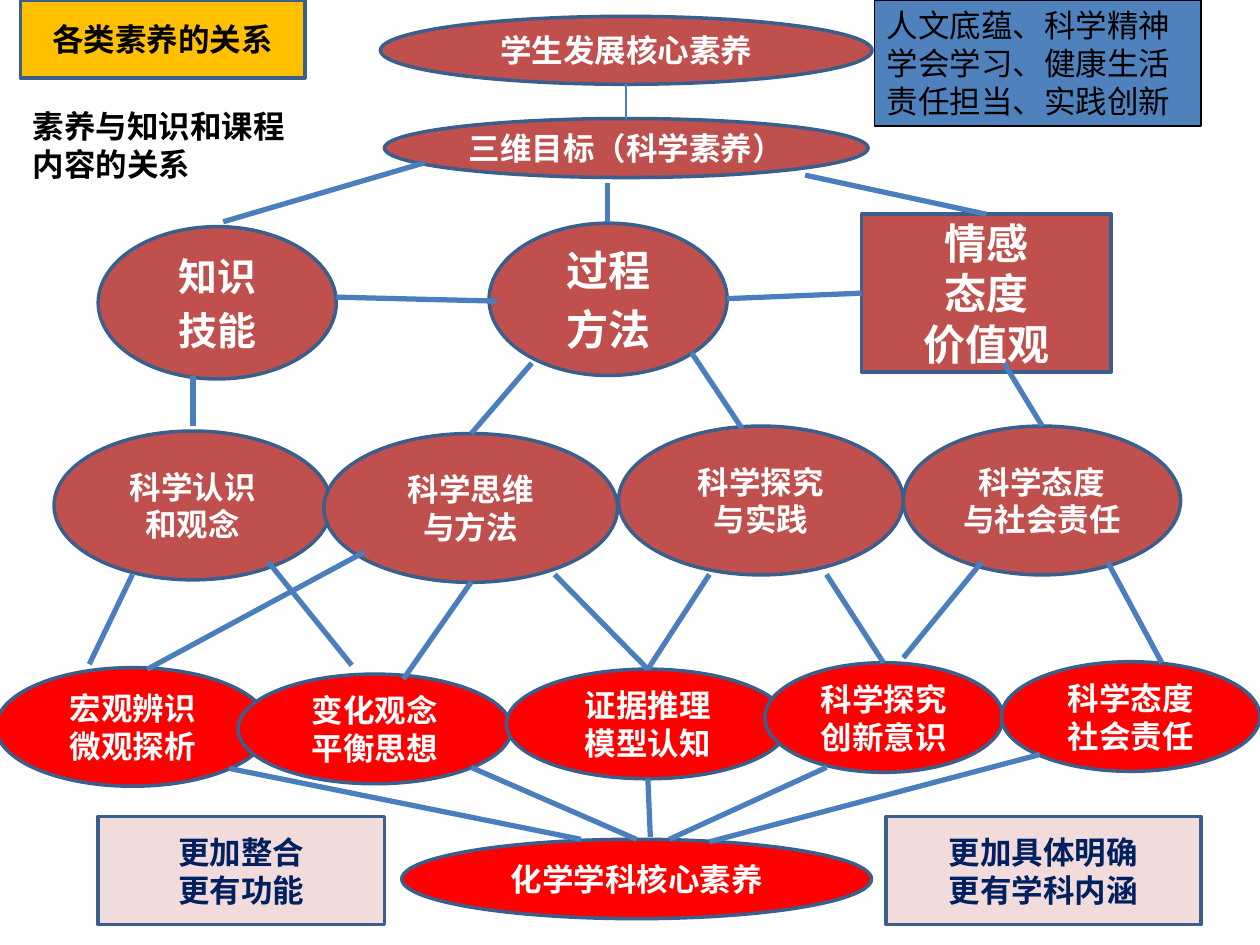
"""Draw the map that links kinds of core literacy."""
from dataclasses import dataclass
from typing import NamedTuple

from lxml.etree import SubElement
from pptx import Presentation
from pptx.dml.color import RGBColor
from pptx.enum.shapes import MSO_CONNECTOR, MSO_SHAPE
from pptx.enum.text import MSO_ANCHOR, PP_ALIGN
from pptx.oxml.ns import qn
from pptx.shapes.autoshape import Shape
from pptx.shapes.connector import Connector
from pptx.slide import Slide
from pptx.text.text import TextFrame
from pptx.util import Cm, Pt


@dataclass(frozen=True)
class Theme:
    font: str = "Calibri"
    brick: str = "C0504D"
    red: str = "FF0000"
    gold: str = "FFC000"
    pink: str = "F2DCDB"
    blue: str = "4F81BD"
    edge: str = "3A5F8C"
    link: str = "4B7EBC"
    navy: str = "002060"
    white: str = "FFFFFF"
    black: str = "000000"
    small: float = 18
    mid: float = 22.2
    large: float = 24
    thin: float = 0.75
    rim: float = 2
    thick: float = 3


LOOK = Theme()


@dataclass(frozen=True)
class Node:
    text: str
    left: float
    top: float
    width: float
    height: float
    fill: str = LOOK.brick
    kind: MSO_SHAPE = MSO_SHAPE.OVAL
    ink: str = LOOK.white
    size: float = LOOK.small
    gap: float = 0
    bold: bool = True
    edge: str = LOOK.edge
    rim: float = LOOK.rim
    align: PP_ALIGN = PP_ALIGN.CENTER
    anchor: MSO_ANCHOR = MSO_ANCHOR.MIDDLE


class Link(NamedTuple):
    left: float
    top: float
    right: float
    base: float
    width: float = LOOK.thick


RECT = MSO_SHAPE.RECTANGLE

VALUES = Node("情感\n态度\n价值观", 17.37, 4.32, 5.03, 3.18, kind=RECT, size=LOOK.large)

NODES = (
    Node("知识\n技能", 1.98, 4.57, 4.8, 3.07, size=LOOK.mid, gap=0.2),
    Node("过程\n方法", 9.86, 4.5, 4.8, 3.07, size=LOOK.large, gap=0.2),
    Node("科学认识\n和观念", 1.09, 8.69, 5.59, 3),
    Node("科学思维\n与方法", 6.53, 8.74, 5.92, 3),
    Node("科学探究\n与实践", 12.47, 8.59, 5.74, 3),
    Node("科学态度\n与社会责任", 18.21, 8.59, 5.59, 3),
    Node("宏观辨识\n微观探析", -0.08, 13.46, 5.51, 2.39, LOOK.red),
    Node("变化观念\n平衡思想", 4.8, 13.59, 5.51, 2.21, LOOK.red),
    Node("证据推理\n模型认知", 10.21, 13.49, 5.69, 2.21, LOOK.red),
    Node("科学探究创新意识", 15.42, 13.36, 4.8, 2.21, LOOK.red),
    Node("科学态度\n社会责任", 20.19, 13.34, 5.21, 2.21, LOOK.red),
    Node("三维目标（科学素养）", 7.75, 2.39, 9.75, 1.19),
    Node("化学学科核心素养", 8.1, 16.92, 9.47, 1.6, LOOK.red),
    Node("学生发展核心素养", 7.67, 0.33, 9.91, 1.37),
    Node("各类素养的关系", 0.41, 0, 5.74, 1.57, LOOK.gold, RECT, LOOK.black),
    Node("更加整合\n更有功能", 1.98, 16.46, 5.77, 2.18, LOOK.pink, RECT, LOOK.navy),
    Node("更加具体明确\n更有学科内涵", 17.86, 16.46, 6.35, 2.18, LOOK.pink, RECT, LOOK.navy),
    Node("人文底蕴、科学精神\n学会学习、健康生活\n责任担当、实践创新", 17.63, 0, 6.58, 2.54,
         LOOK.blue, RECT, LOOK.black, bold=False, edge=LOOK.black, rim=LOOK.thin,
         align=PP_ALIGN.LEFT, anchor=MSO_ANCHOR.TOP),
)

NOTE = Node("素养与知识和课程内容的关系", 0.41, 2.03, 5.74, 1.8, ink=LOOK.black,
            align=PP_ALIGN.LEFT, anchor=MSO_ANCHOR.TOP)

LINKS = (
    Link(12.62, 1.7, 12.62, 2.39, LOOK.thin),
    Link(8.56, 3.28, 4.5, 4.47),
    Link(12.24, 3.68, 12.24, 4.47),
    Link(6.78, 5.99, 10.01, 6.07),
    Link(3.89, 7.57, 3.89, 8.59),
    Link(10.72, 7.32, 9.5, 8.74),
    Link(13.94, 7.11, 14.96, 8.64),
    Link(20.24, 7.32, 21.01, 8.59),
    Link(2.67, 11.58, 1.8, 13.39),
    Link(5.41, 11.33, 7.09, 13.41),
    Link(7.34, 11.13, 2.97, 13.49),
    Link(9.5, 11.73, 8.13, 13.69),
    Link(11.18, 11.58, 13.06, 13.49),
    Link(14.3, 11.58, 13.06, 13.49),
    Link(16.66, 11.58, 17.81, 13.36),
    Link(19.79, 11.33, 18.21, 13.26),
    Link(22.33, 11.33, 23.42, 13.36),
    Link(11.71, 16.92, 4.62, 15.49),
    Link(12.83, 16.92, 9.5, 15.47),
    Link(13.11, 16.87, 13.06, 15.7),
    Link(13.49, 16.92, 16.66, 15.47),
    Link(14.3, 16.97, 20.96, 15.21),
)
TOVALUES = (
    (Link(16.23, 3.53, 19.88, 4.32), 0),
    (Link(14.66, 6.02, 17.37, 5.91), 1),
)


def tint(code: str) -> RGBColor:
    """Turn a hex code into a colour."""
    return RGBColor.from_string(code)


def write(frame: TextFrame, node: Node) -> None:
    """Fill a frame with the lines of a node."""
    frame.word_wrap = True
    frame.vertical_anchor = node.anchor
    for index, line in enumerate(node.text.split("\n")):
        para = frame.add_paragraph() if index else frame.paragraphs[0]
        para.alignment = node.align
        para.space_before = Pt(node.gap * node.size)
        run = para.add_run()
        run.text = line
        run.font.name = LOOK.font
        run.font.size = Pt(node.size)
        run.font.bold = node.bold
        run.font.color.rgb = tint(node.ink)


def place(node: Node) -> tuple[Cm, Cm, Cm, Cm]:
    """Give the bounds of a node."""
    return Cm(node.left), Cm(node.top), Cm(node.width), Cm(node.height)


def draw(slide: Slide, node: Node) -> Shape:
    """Add one filled shape with its text."""
    shape = slide.shapes.add_shape(node.kind, *place(node))
    shape.shadow.inherit = False
    shape.fill.solid()
    shape.fill.fore_color.rgb = tint(node.fill)
    shape.line.color.rgb = tint(node.edge)
    shape.line.width = Pt(node.rim)
    write(shape.text_frame, node)
    return shape


def join(slide: Slide, link: Link) -> Connector:
    """Add one straight line."""
    line = slide.shapes.add_connector(
        MSO_CONNECTOR.STRAIGHT, Cm(link.left), Cm(link.top), Cm(link.right), Cm(link.base))
    line.line.color.rgb = tint(LOOK.link)
    line.line.width = Pt(link.width)
    SubElement(line._element.spPr, qn("a:effectLst"))
    return line


def main() -> None:
    """Build and save the slide."""
    deck = Presentation()
    deck.slide_width, deck.slide_height = Cm(25.4), Cm(19.05)
    slide = deck.slides.add_slide(deck.slide_layouts[6])
    values = draw(slide, VALUES)
    for node in NODES:
        draw(slide, node)
    for link in LINKS:
        join(slide, link)
    for link, side in TOVALUES:
        join(slide, link).end_connect(values, side)
    write(slide.shapes.add_textbox(*place(NOTE)).text_frame, NOTE)
    deck.save("out.pptx")


if __name__ == "__main__":
    main()
